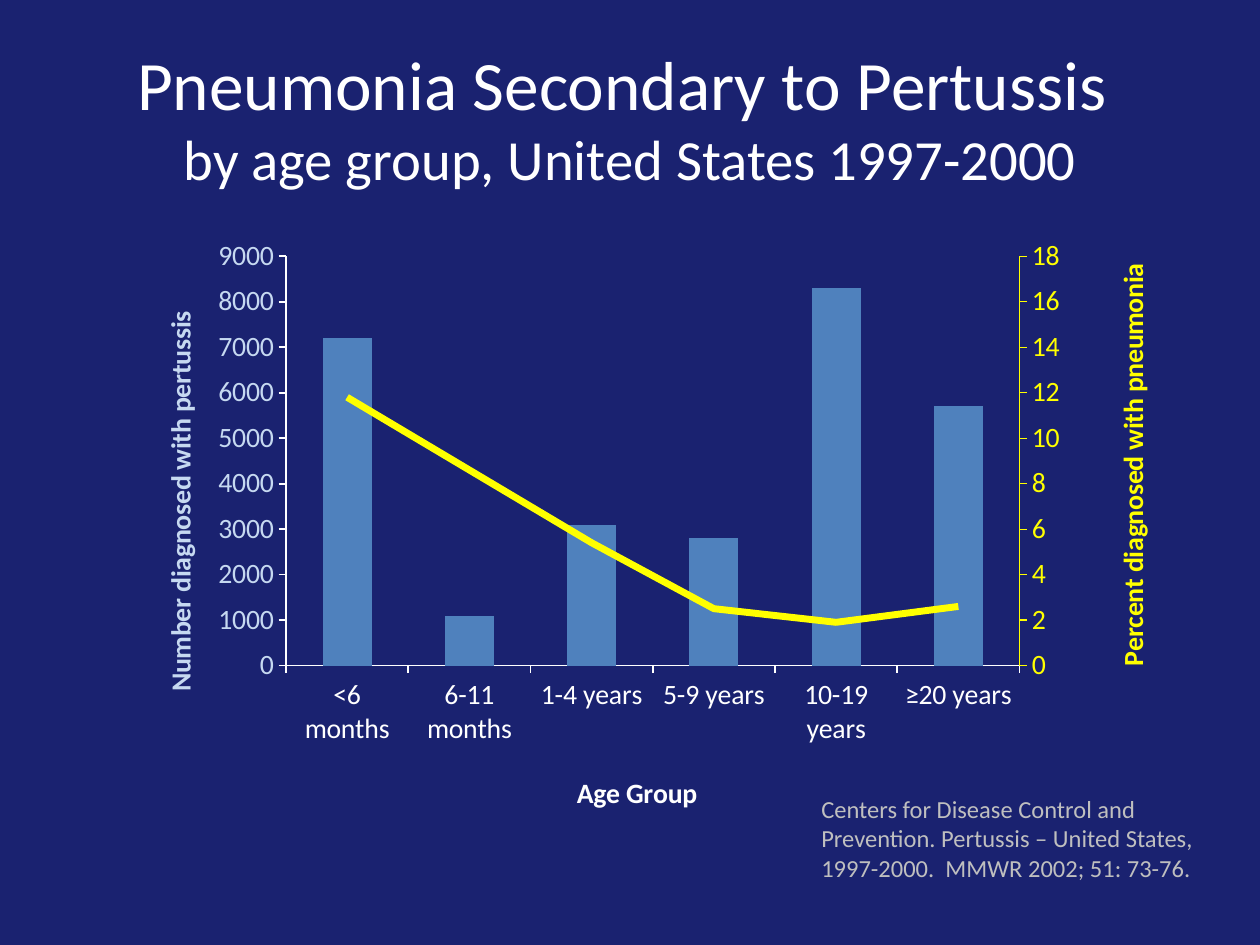
from copy import deepcopy

from lxml import etree
from pptx import Presentation
from pptx.chart.axis import ValueAxis
from pptx.chart.data import CategoryChartData
from pptx.dml.color import RGBColor
from pptx.enum.chart import XL_CHART_TYPE, XL_MARKER_STYLE, XL_TICK_MARK
from pptx.enum.text import MSO_ANCHOR, PP_ALIGN
from pptx.oxml import parse_xml
from pptx.oxml.ns import nsdecls, qn
from pptx.util import Inches, Pt

COLUMN = XL_CHART_TYPE.COLUMN_CLUSTERED
NO_MARK = XL_MARKER_STYLE.NONE
OUT, NO_TICK = XL_TICK_MARK.OUTSIDE, XL_TICK_MARK.NONE
CENTER, MIDDLE = PP_ALIGN.CENTER, MSO_ANCHOR.MIDDLE
FACE = "Calibri"
WHITE, PALE, YELLOW, BLUE = "FFFFFF", "C6D9F1", "FFFF00", "4F81BD"


def paint(font, size, color):
    font.name = FACE
    font.size = Pt(size)
    font.color.rgb = RGBColor.from_string(color)


def layout(target, **parts):
    """Return a manual chart layout; parts are fractions of the chart."""
    modes = '<c:xMode val="edge"/><c:yMode val="edge"/>'
    sizes = "".join(f'<c:{key} val="{val}"/>' for key, val in parts.items())
    inner = f'<c:layoutTarget val="{target}"/>' if target else ""
    return parse_xml(f'<c:layout {nsdecls("c")}><c:manualLayout>{inner}'
                     f'{modes}{sizes}</c:manualLayout></c:layout>')


prs = Presentation()
prs.slide_width, prs.slide_height = Inches(10), Inches(7.5)
slide = prs.slides.add_slide(prs.slide_layouts[6])
slide.background.fill.solid()
slide.background.fill.fore_color.rgb = RGBColor.from_string("1A2270")

# Title
box = slide.shapes.add_textbox(Inches(0.5), Inches(0.3), Inches(9), Inches(1.25))
frame = box.text_frame
frame.word_wrap = True
frame.vertical_anchor = MIDDLE
para = frame.paragraphs[0]
para.text = "Pneumonia Secondary to Pertussis \vby age group, United States 1997-2000"
para.alignment = CENTER
for run, size in zip(para.runs, (39.6, 32.4)):
    paint(run.font, size, WHITE)

# Chart data
data = CategoryChartData()
data.categories = ["<6 months", "6-11 months", "1-4 years",
                   "5-9 years", "10-19 years", "≥20 years"]
data.add_series("Series 1", [7200, 1100, 3100, 2800, 8300, 5700])
data.add_series("Series 2", [11.8, 8.6, 5.4, 2.5, 1.9, 2.6])
chart = slide.shapes.add_chart(COLUMN, Inches(1.08), Inches(1.83),
                               Inches(8.12), Inches(4.75), data).chart
chart.has_legend = False
chart.has_title = False
paint(chart.font, 16, WHITE)
bars = chart.plots[0]
bars.gap_width = 150
bars.vary_by_categories = False
fill = bars.series[0].format.fill
fill.solid()
fill.fore_color.rgb = RGBColor.from_string(BLUE)
cat_axis, left_axis = chart.category_axis, chart.value_axis
left_axis.has_major_gridlines = False

# Second series becomes a line on its own pair of axes
area = chart._chartSpace.chart.plotArea
bar = area.find(qn("c:barChart"))
ser = bar.findall(qn("c:ser"))[1]
etree.strip_elements(ser, qn("c:invertIfNegative"))
line = parse_xml(f'<c:lineChart {nsdecls("c")}><c:grouping val="standard"/>'
                 '<c:varyColors val="0"/><c:marker val="1"/>'
                 '<c:axId val="5001"/><c:axId val="5002"/></c:lineChart>')
line.insert(2, ser)
bar.addnext(line)
cat, val = area.find(qn("c:catAx")), area.find(qn("c:valAx"))
hidden, right = deepcopy(cat), deepcopy(val)
for axis, own, other in ((hidden, "5001", "5002"), (right, "5002", "5001")):
    axis.find(qn("c:axId")).set("val", own)
    axis.find(qn("c:crossAx")).set("val", other)
hidden.find(qn("c:delete")).set("val", "1")
right.find(qn("c:axPos")).set("val", "r")
right.find(qn("c:crosses")).set("val", "max")
val.addnext(right)
right.addnext(hidden)

trend = chart.plots[1].series[0]
trend.smooth = False
trend.marker.style = NO_MARK
trend.format.line.width = Pt(4)
trend.format.line.color.rgb = RGBColor.from_string(YELLOW)

# Axes: text colour, line colour, title and its place
right_axis = ValueAxis(right)
for axis, color, edge, title, x, y in (
        (cat_axis, WHITE, WHITE, "Age Group", 0.43, 0.9),
        (left_axis, PALE, WHITE, "Number diagnosed with pertussis", 0.02, 0.12),
        (right_axis, YELLOW, YELLOW, "Percent diagnosed with pneumonia", 0.96, 0.04)):
    axis.major_tick_mark, axis.minor_tick_mark = OUT, NO_TICK
    paint(axis.tick_labels.font, 16, color)
    axis.format.line.color.rgb = RGBColor.from_string(edge)
    axis.format.line.width = Pt(0.75 if axis is right_axis else 1)
    head = axis.axis_title
    para = head.text_frame.paragraphs[0]
    para.text = title
    paint(para.runs[0].font, 16, color)
    para.runs[0].font.bold = True
    if axis is not cat_axis:
        body = head.text_frame._txBody.find(qn("a:bodyPr"))
        body.set("rot", "-5400000")
        body.set("vert", "horz")
    node = head._element
    etree.strip_elements(node, qn("c:layout"))
    node.find(qn("c:tx")).addnext(layout("", x=x, y=y))
left_axis.minimum_scale, left_axis.maximum_scale = 0, 9000
left_axis.major_unit = 1000
right_axis.minimum_scale, right_axis.maximum_scale = 0, 18
right_axis.major_unit = 2

for old in area.findall(qn("c:layout")):
    area.remove(old)
area.insert(0, layout("inner", x=0.148, y=0.043, w=0.724, h=0.684))

# Citation
box = slide.shapes.add_textbox(Inches(6.42), Inches(6.25), Inches(3.44), Inches(0.81))
box.text_frame.word_wrap = True
para = box.text_frame.paragraphs[0]
para.text = ("Centers for Disease Control and Prevention. Pertussis – "
             "United States, 1997-2000.  MMWR 2002; 51: 73-76.")
paint(para.runs[0].font, 14, "BFBFBF")

prs.save("out.pptx")
